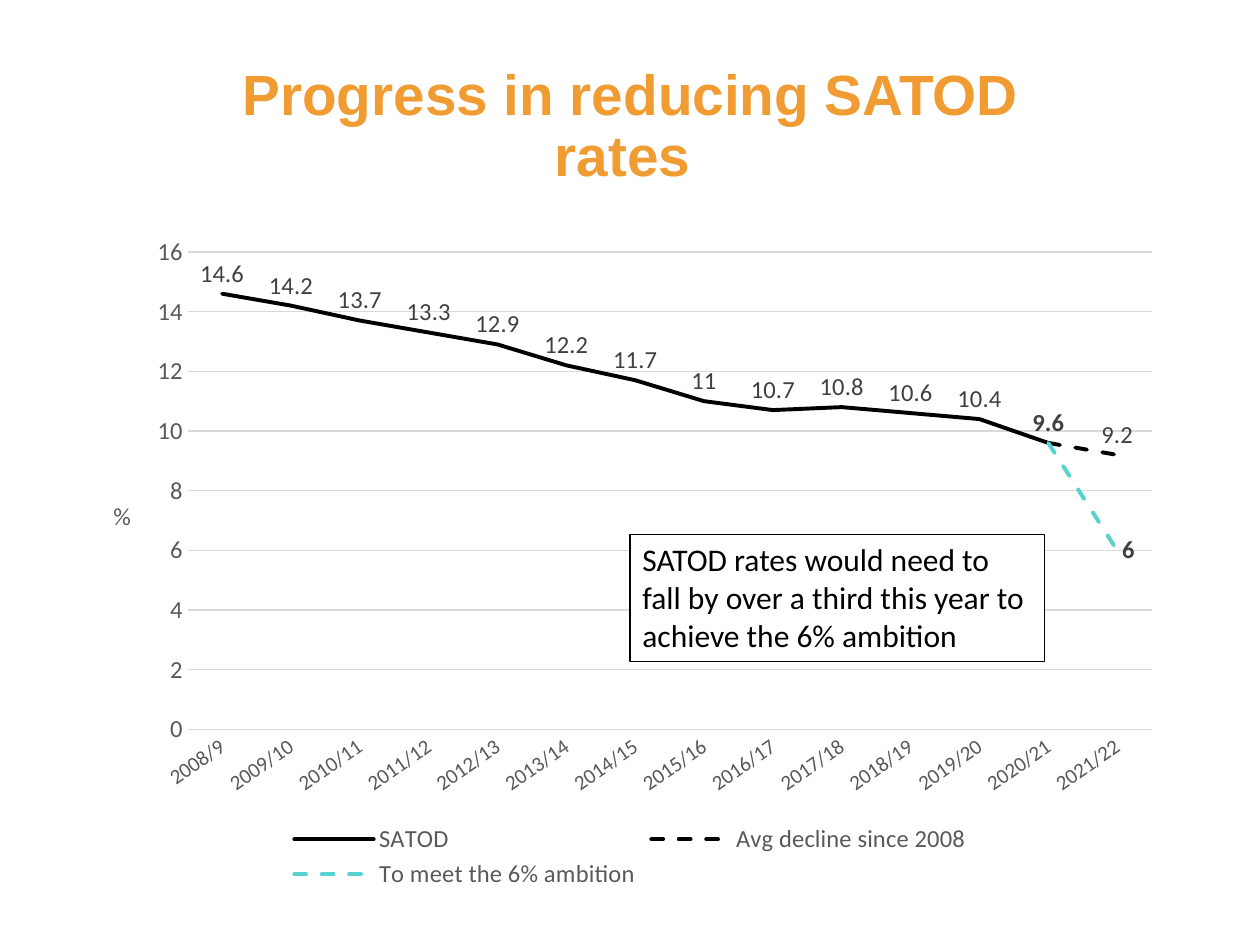
from dataclasses import dataclass
from typing import Optional

from lxml import etree
from pptx import Presentation
from pptx.chart.data import CategoryChartData
from pptx.dml.color import RGBColor
from pptx.enum.chart import (XL_CHART_TYPE, XL_LABEL_POSITION, XL_LEGEND_POSITION,
                             XL_MARKER_STYLE, XL_TICK_MARK)
from pptx.enum.dml import MSO_LINE
from pptx.enum.shapes import MSO_SHAPE
from pptx.enum.text import MSO_ANCHOR, MSO_AUTO_SIZE, PP_ALIGN
from pptx.oxml.ns import qn
from pptx.util import Inches, Pt

ABOVE, RIGHT = XL_LABEL_POSITION.ABOVE, XL_LABEL_POSITION.RIGHT
DASH = MSO_LINE.DASH
NO_TICK = XL_TICK_MARK.NONE
NO_MARKER = XL_MARKER_STYLE.NONE


@dataclass(frozen=True)
class Theme:
    orange: str = "F19C32"
    black: str = "000000"
    white: str = "FFFFFF"
    teal: str = "56D2CF"
    axis_text: str = "595959"
    label_text: str = "404040"
    grid: str = "D9D9D9"
    title_font: str = "Arial"
    body_font: str = "Calibri"
    title_size: float = 32.4
    note_size: float = 18
    chart_size: float = 14
    category_size: float = 12
    thin: float = 0.75
    thick: float = 2.25


THEME = Theme()


@dataclass(frozen=True)
class Box:
    left: float
    top: float
    width: float
    height: float

    def lengths(self) -> list:
        return [Inches(n) for n in (self.left, self.top, self.width, self.height)]


@dataclass(frozen=True)
class Trend:
    name: str
    values: list
    color: str
    dash: Optional[MSO_LINE]
    label_all: bool
    point: int  # point with a label of its own
    position: XL_LABEL_POSITION
    bold: bool


TITLE_BOX = Box(1.77, 0.91, 6.47, 0.64)
CHART_BOX = Box(0.69, 1.78, 8.62, 5.32)
PLOT_BOX = Box(1.49, 2, 7.65, 3.79)
NOTE_BOX = Box(5, 4.24, 3.29, 1.01)

YEARS = [f"{year}/{(year + 1) % 100}" for year in range(2008, 2022)]
RATES = [14.6, 14.2, 13.7, 13.3, 12.9, 12.2, 11.7, 11, 10.7, 10.8, 10.6, 10.4, 9.6]
LAST = len(YEARS) - 1
BEFORE = [None] * (LAST - 1)
TRENDS = [
    Trend("SATOD", RATES + [None], THEME.black, None, True, LAST - 1, ABOVE, True),
    Trend("Avg decline since 2008", BEFORE + [9.6, 9.2], THEME.black, DASH, False, LAST, ABOVE, False),
    Trend("To meet the 6% ambition", BEFORE + [9.6, 6], THEME.teal, DASH, False, LAST, RIGHT, True),
]


def set_font(font, size: float, color: str, name: str = THEME.body_font, bold: bool = False) -> None:
    font.size, font.name, font.bold = Pt(size), name, bold
    font.color.rgb = RGBColor.from_string(color)


def set_line(line, color: str, width: float) -> None:
    line.color.rgb = RGBColor.from_string(color)
    line.width = Pt(width)


def add_title(page, text: str) -> None:
    title = page.shapes.title
    title.left, title.top, title.width, title.height = TITLE_BOX.lengths()
    frame = title.text_frame
    frame.text = text
    frame.auto_size = MSO_AUTO_SIZE.NONE
    frame.vertical_anchor = MSO_ANCHOR.BOTTOM
    para = frame.paragraphs[0]
    para.alignment, para.line_spacing = PP_ALIGN.CENTER, 0.9
    set_font(para.font, THEME.title_size, THEME.orange, THEME.title_font, True)


def style_trend(series, trend: Trend) -> None:
    series.smooth = False
    series.marker.style = NO_MARKER
    line = series.format.line
    set_line(line, trend.color, THEME.thick)
    if trend.dash:
        line.dash_style = trend.dash
    series._element.find(qn("c:spPr")).find(qn("a:ln")).set("cap", "rnd")
    labels = series.data_labels
    labels.show_value = trend.label_all
    labels.position = ABOVE
    set_font(labels.font, THEME.chart_size, THEME.label_text)
    label = series.points[trend.point].data_label
    set_font(label.font, THEME.chart_size, THEME.label_text, bold=trend.bold)
    label.position = trend.position


def style_axes(chart) -> None:
    years, rates = chart.category_axis, chart.value_axis
    for axis, size in ((years, THEME.category_size), (rates, THEME.chart_size)):
        axis.major_tick_mark = axis.minor_tick_mark = NO_TICK
        set_font(axis.tick_labels.font, size, THEME.axis_text)
    set_line(years.format.line, THEME.grid, THEME.thin)
    years._element.find(qn("c:txPr")).find(qn("a:bodyPr")).set("rot", "-2100000")
    rates.format.line.fill.background()
    set_line(rates.major_gridlines.format.line, THEME.grid, THEME.thin)
    rates.minimum_scale, rates.maximum_scale, rates.major_unit = 0, 16, 2
    # Upright axis title
    frame = rates.axis_title.text_frame
    frame.text = "%"
    set_font(frame.paragraphs[0].font, THEME.chart_size, THEME.axis_text)
    body = frame._txBody.find(qn("a:bodyPr"))
    body.set("rot", "0")
    body.set("vert", "horz")


def place_plot(chart, plot: Box, whole: Box) -> None:
    """Fix the inner plot area, as fractions of the whole chart."""
    area = chart._chartSpace.chart.plotArea
    for old in area.findall(qn("c:layout")):
        area.remove(old)
    layout = etree.Element(qn("c:layout"))
    area.insert(0, layout)
    manual = etree.SubElement(layout, qn("c:manualLayout"))
    settings = {"layoutTarget": "inner", "xMode": "edge", "yMode": "edge",
                "x": (plot.left - whole.left) / whole.width,
                "y": (plot.top - whole.top) / whole.height,
                "w": plot.width / whole.width,
                "h": plot.height / whole.height}
    for tag, value in settings.items():
        etree.SubElement(manual, qn(f"c:{tag}")).set("val", str(value))


def add_rate_chart(page) -> None:
    data = CategoryChartData()
    data.categories = YEARS
    for trend in TRENDS:
        data.add_series(trend.name, trend.values)
    chart = page.shapes.add_chart(XL_CHART_TYPE.LINE, *CHART_BOX.lengths(), data).chart
    chart.has_title = False
    set_font(chart.font, 10, THEME.black)
    chart.plots[0].vary_by_categories = False
    for series, trend in zip(chart.plots[0].series, TRENDS):
        style_trend(series, trend)
    style_axes(chart)
    place_plot(chart, PLOT_BOX, CHART_BOX)
    chart.has_legend = True
    chart.legend.position = XL_LEGEND_POSITION.BOTTOM
    chart.legend.include_in_layout = False
    set_font(chart.legend.font, THEME.chart_size, THEME.axis_text)


def add_note(page, text: str) -> None:
    note = page.shapes.add_shape(MSO_SHAPE.RECTANGLE, *NOTE_BOX.lengths())
    note.shadow.inherit = False
    note.fill.solid()
    note.fill.fore_color.rgb = RGBColor.from_string(THEME.white)
    set_line(note.line, THEME.black, THEME.thin)
    frame = note.text_frame
    frame.text = text
    frame.word_wrap = True
    frame.auto_size = MSO_AUTO_SIZE.SHAPE_TO_FIT_TEXT
    frame.vertical_anchor = MSO_ANCHOR.TOP
    para = frame.paragraphs[0]
    para.alignment = PP_ALIGN.LEFT
    set_font(para.font, THEME.note_size, THEME.black)


def main() -> None:
    deck = Presentation()
    deck.slide_width, deck.slide_height = Inches(10), Inches(7.5)
    page = deck.slides.add_slide(deck.slide_layouts[5])  # title only
    add_rate_chart(page)
    add_title(page, "Progress in reducing SATOD rates ")
    add_note(page, "SATOD rates would need to fall by over a third this year to achieve the 6% ambition")
    deck.save("out.pptx")


if __name__ == "__main__":
    main()
